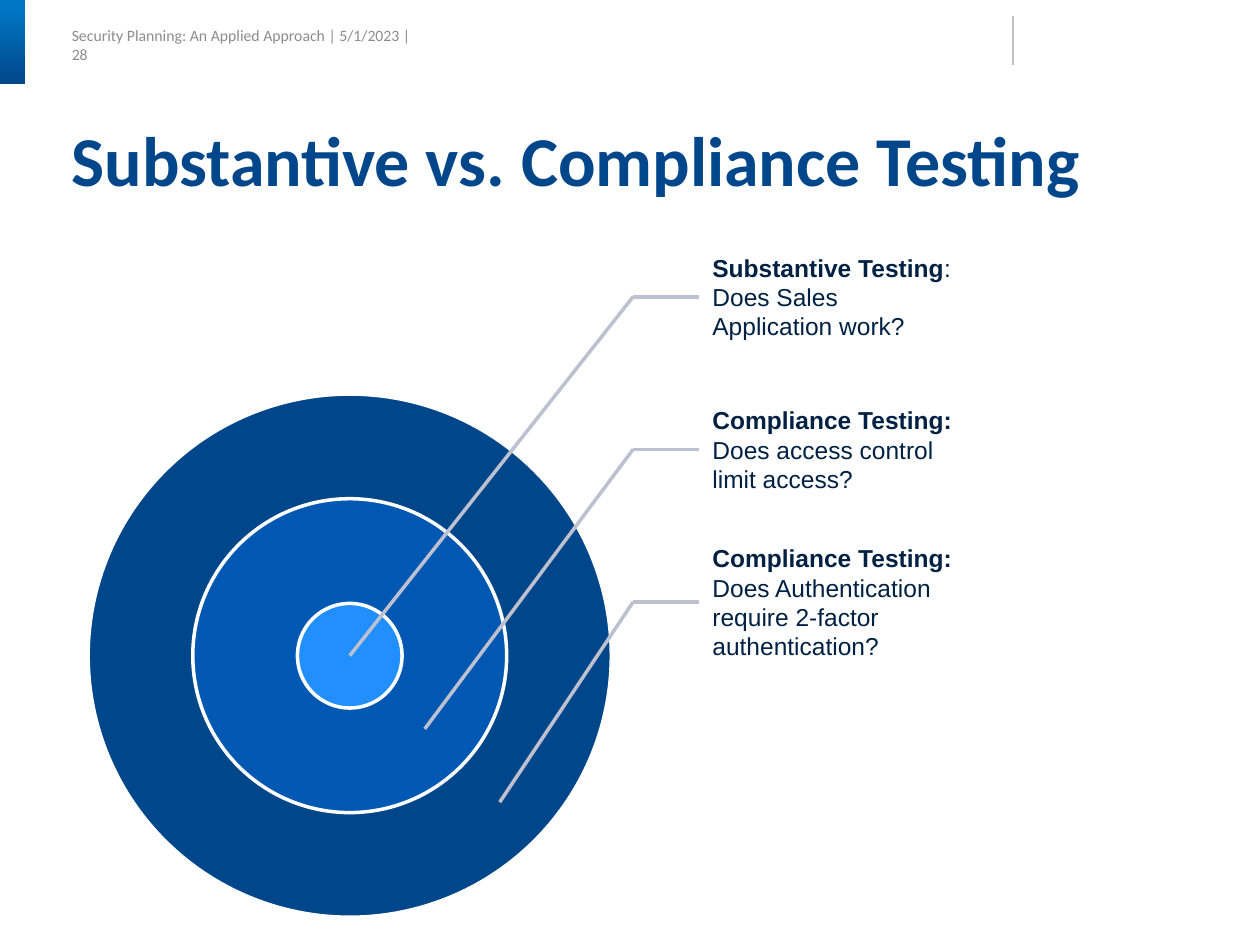
from collections import namedtuple

from lxml.etree import SubElement
from pptx import Presentation
from pptx.dml.color import RGBColor
from pptx.enum.shapes import MSO_CONNECTOR as Connector, MSO_SHAPE as Shape
from pptx.enum.text import MSO_ANCHOR as Anchor, PP_ALIGN as Align
from pptx.oxml.ns import qn
from pptx.util import Inches, Pt

COLORS = {
    "navy": "00468A", "blue": "0058B2", "sky": "218FFF", "accent": "0176C3",
    "ink": "002143", "muted": "8C8C8C", "divider": "BFBFBF",
    "leader": "BDC1CF", "white": "FFFFFF",
}
Box = namedtuple("Box", "left top width height")

SLIDE = Box(0, 0, 10, 7.5)
HEADER = Box(0, 0, 10, 0.67)
TITLE = Box(0.57, 1, 8.92, 0.55)
DIAGRAM = Box(0.7, 1.75, 6.92, 5.53)

RINGS = [(1, "navy"), (0.6, "blue"), (0.2, "sky")]
TESTS = [
    ("Substantive Testing", ":", "Does Sales Application work?"),
    ("Compliance Testing:", "", "Does access control limit access?"),
    ("Compliance Testing:", "", "Does Authentication require 2-factor authentication?"),
]


def rgb(name):
    return RGBColor.from_string(COLORS[name])


def set_font(font, name, size, color, bold=None):
    font.name, font.size, font.bold = name, Pt(size), bold
    font.color.rgb = rgb(color)


def set_margins(frame, left=0, others=0):
    frame.margin_left = Inches(left)
    frame.margin_top = frame.margin_right = frame.margin_bottom = Inches(others)


def add_line(slide, start, end, color, width):
    line = slide.shapes.add_connector(
        Connector.STRAIGHT, *(Inches(v) for v in (*start, *end)))
    line.line.color.rgb = rgb(color)
    line.line.width = Pt(width)
    SubElement(line._element.spPr, qn("a:effectLst"))


def add_header(slide, box):
    bar = slide.shapes.add_shape(
        Shape.RECTANGLE, Inches(box.left), Inches(box.top),
        Inches(box.width * 0.02), Inches(box.height))
    bar.shadow.inherit = False
    bar.line.fill.background()
    bar.fill.gradient()
    bar.fill.gradient_angle = 270
    for stop, (position, color) in zip(
            bar.fill.gradient_stops, [(0.1, "accent"), (1, "navy")]):
        stop.position = position
        stop.color.rgb = rgb(color)

    running_head = slide.shapes.add_textbox(
        Inches(TITLE.left), Inches(box.top + 0.24), Inches(2.84), Inches(0.23))
    frame = running_head.text_frame
    frame.word_wrap = False
    frame.vertical_anchor = Anchor.MIDDLE
    set_margins(frame)
    frame.text = "Security Planning: An Applied Approach | 5/1/2023 | 28"
    set_font(frame.paragraphs[0].font, "Calibri", 9, "muted")

    divider_x = box.left + box.width * 0.804
    add_line(slide, (divider_x, box.top + 0.13), (divider_x, box.top + 0.52),
             "divider", 0.75)


def add_title(slide, box):
    title = slide.shapes.title
    title.left, title.top, title.width, title.height = map(Inches, box)
    frame = title.text_frame
    frame.text = "Substantive vs. Compliance Testing"
    frame.word_wrap = True
    frame.vertical_anchor = Anchor.TOP
    set_margins(frame)
    heading = frame.paragraphs[0]
    heading.alignment = Align.LEFT
    heading.line_spacing = 0.9
    set_font(heading.font, "Calibri", 40, "navy", True)


def add_test_label(slide, box, name, suffix, question):
    label = slide.shapes.add_textbox(*map(Inches, box))
    frame = label.text_frame
    frame.word_wrap = True
    frame.vertical_anchor = Anchor.MIDDLE
    set_margins(frame, left=0.11, others=0.02)
    heading, body = frame.paragraphs[0], frame.add_paragraph()
    heading.add_run().text = name
    heading.runs[0].font.bold = True
    if suffix:
        heading.add_run().text = suffix
    body.text = question
    for paragraph in (heading, body):
        set_font(paragraph.font, "Arial", 14, "ink")


def add_target_diagram(slide, box):
    """Concentric rings at bottom left, each led to a label at top right."""
    diameter = box.width * 0.6
    center_x = box.left + diameter / 2
    center_y = box.top + box.height - diameter / 2
    for share, color in RINGS:
        size = diameter * share
        ring = slide.shapes.add_shape(
            Shape.OVAL, Inches(center_x - size / 2), Inches(center_y - size / 2),
            Inches(size), Inches(size))
        ring.shadow.inherit = False
        ring.fill.solid()
        ring.fill.fore_color.rgb = rgb(color)
        ring.line.color.rgb = rgb("white")
        ring.line.width = Pt(2)

    row_height = box.width * 0.175
    label_x = box.left + box.width * 0.7
    elbow_x = box.left + box.width * 0.625
    step_x, step_y = box.width * 0.086, box.width * 0.084
    for row, test in enumerate(TESTS):
        row_top = box.top + row * row_height
        add_test_label(
            slide, Box(label_x, row_top, box.width * 0.3, row_height), *test)
        elbow = (elbow_x, row_top + row_height / 2)
        ring_point = (center_x + row * step_x, center_y + row * step_y)
        for end in ((label_x, elbow[1]), ring_point):
            add_line(slide, elbow, end, "leader", 2)


def main():
    deck = Presentation()
    deck.slide_width, deck.slide_height = Inches(SLIDE.width), Inches(SLIDE.height)
    slide = deck.slides.add_slide(deck.slide_layouts.get_by_name("Title Only"))
    add_header(slide, HEADER)
    add_title(slide, TITLE)
    add_target_diagram(slide, DIAGRAM)
    deck.save("out.pptx")


if __name__ == "__main__":
    main()
